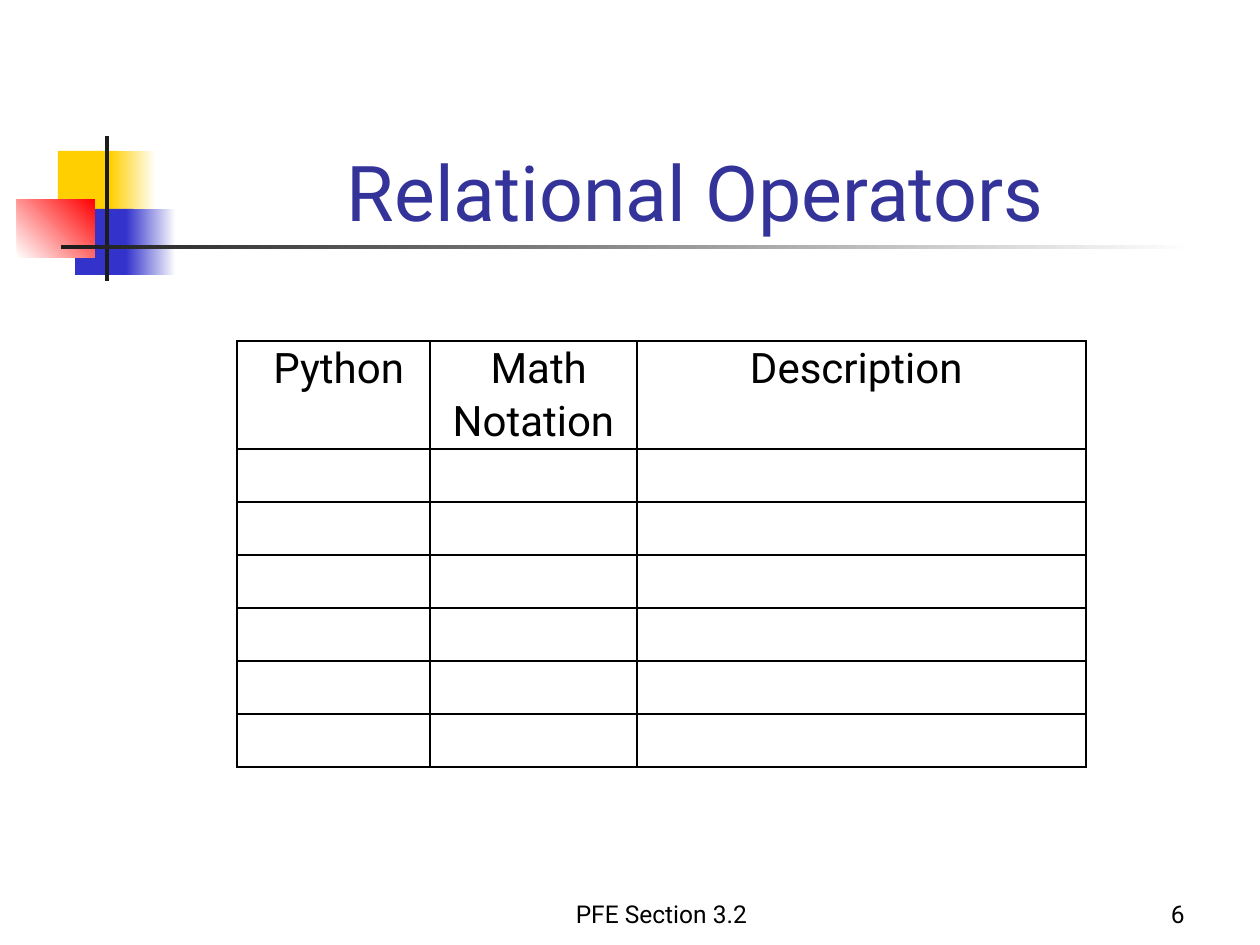
import pptx
import pptx.dml.color
import pptx.enum.shapes
import pptx.enum.text
import pptx.oxml
import pptx.oxml.ns
import pptx.util

RGBColor = pptx.dml.color.RGBColor
ALIGN = pptx.enum.text.PP_ALIGN

EMU_PER_PX = 914400 / 126
FONT = "Roboto"
BLACK = RGBColor(0x00, 0x00, 0x00)
WHITE = RGBColor(0xFF, 0xFF, 0xFF)
YELLOW = RGBColor(0xFF, 0xCF, 0x01)
BLUE = RGBColor(0x33, 0x33, 0xCC)
RED = RGBColor(0xFF, 0x00, 0x00)
CHARCOAL = RGBColor(0x1C, 0x1C, 0x1C)
INDIGO = RGBColor(0x33, 0x33, 0x99)

HEADINGS = [" Python", " Math Notation", "Description "]
COLUMN_WIDTHS = [193, 207, 449]
HEADING_HEIGHT = 106
ROW_HEIGHT = 53
EMPTY_ROWS = 6


def px(length):
    return pptx.util.Emu(round(length * EMU_PER_PX))


def add_block(slide, box, colour, fade_to=None, angle=0):
    """Add a borderless rectangle, plain or fading from colour to fade_to."""
    block = slide.shapes.add_shape(
        pptx.enum.shapes.MSO_SHAPE.RECTANGLE, *map(px, box))
    block.shadow.inherit = False
    block.line.fill.background()
    if fade_to is None:
        block.fill.solid()
        block.fill.fore_color.rgb = colour
        return
    block.fill.gradient()
    block.fill.gradient_angle = angle
    for stop, position, shade in zip(block.fill.gradient_stops, (0, 1), (colour, fade_to)):
        stop.position = position
        stop.color.rgb = shade


def format_paragraph(paragraph, size, colour, align):
    paragraph.alignment = align
    for run in paragraph.runs:
        run.font.name = FONT
        run.font.size = pptx.util.Pt(size)
        run.font.color.rgb = colour


def add_label(slide, box, text, size, colour, align):
    frame = slide.shapes.add_textbox(*map(px, box)).text_frame
    frame.word_wrap = True
    frame.vertical_anchor = pptx.enum.text.MSO_ANCHOR.BOTTOM
    frame.text = text
    format_paragraph(frame.paragraphs[0], size, colour, align)


def set_borders(cell):
    properties = cell._tc.get_or_add_tcPr()
    for position, side in enumerate(("lnL", "lnR", "lnT", "lnB")):
        properties.insert(position, pptx.oxml.parse_xml(
            f'<a:{side} {pptx.oxml.ns.nsdecls("a")} w="12700"><a:solidFill>'
            f'<a:srgbClr val="{BLACK}"/></a:solidFill></a:{side}>'))


def add_operator_table(slide, left, top):
    heights = [HEADING_HEIGHT] + [ROW_HEIGHT] * EMPTY_ROWS
    operators = slide.shapes.add_table(
        len(heights), len(HEADINGS), px(left), px(top),
        px(sum(COLUMN_WIDTHS)), px(sum(heights))).table
    operators.first_row = operators.horz_banding = False
    for column, width in zip(operators.columns, COLUMN_WIDTHS):
        column.width = px(width)
    for row, height in zip(operators.rows, heights):
        row.height = px(height)
    for cell in operators.iter_cells():
        cell.fill.background()
        cell.margin_left = cell.margin_right = px(9)
        cell.margin_top = cell.margin_bottom = 0
        set_borders(cell)
    for cell, heading in zip(operators.rows[0].cells, HEADINGS):
        cell.text = heading
        paragraph = cell.text_frame.paragraphs[0]
        paragraph.line_spacing = 1.07
        format_paragraph(paragraph, 24, BLACK, ALIGN.CENTER)


def add_ornament(slide):
    add_block(slide, (58, 151, 60, 66), YELLOW)
    add_block(slide, (110, 151, 46, 66), YELLOW, WHITE)
    add_block(slide, (75, 209, 58, 66), BLUE)
    add_block(slide, (126, 209, 50, 66), BLUE, WHITE)
    add_block(slide, (17, 199, 78, 59), WHITE, RED, angle=45)
    add_block(slide, (105, 136, 4, 145), CHARCOAL)
    add_block(slide, (61, 245, 1134, 4), CHARCOAL, WHITE)


def main():
    presentation = pptx.Presentation()
    presentation.slide_width = px(1260)
    presentation.slide_height = px(945)
    slide = presentation.slides.add_slide(presentation.slide_layouts[6])
    add_ornament(slide)
    add_label(slide, (159, 86, 1073, 157), "Relational Operators", 44, INDIGO, ALIGN.CENTER)
    add_label(slide, (462, 872, 399, 63), "PFE Section 3.2", 14, BLACK, ALIGN.CENTER)
    add_label(slide, (935, 872, 262, 63), "6", 14, BLACK, ALIGN.RIGHT)
    add_operator_table(slide, 237, 341)
    presentation.save("out.pptx")


if __name__ == "__main__":
    main()
